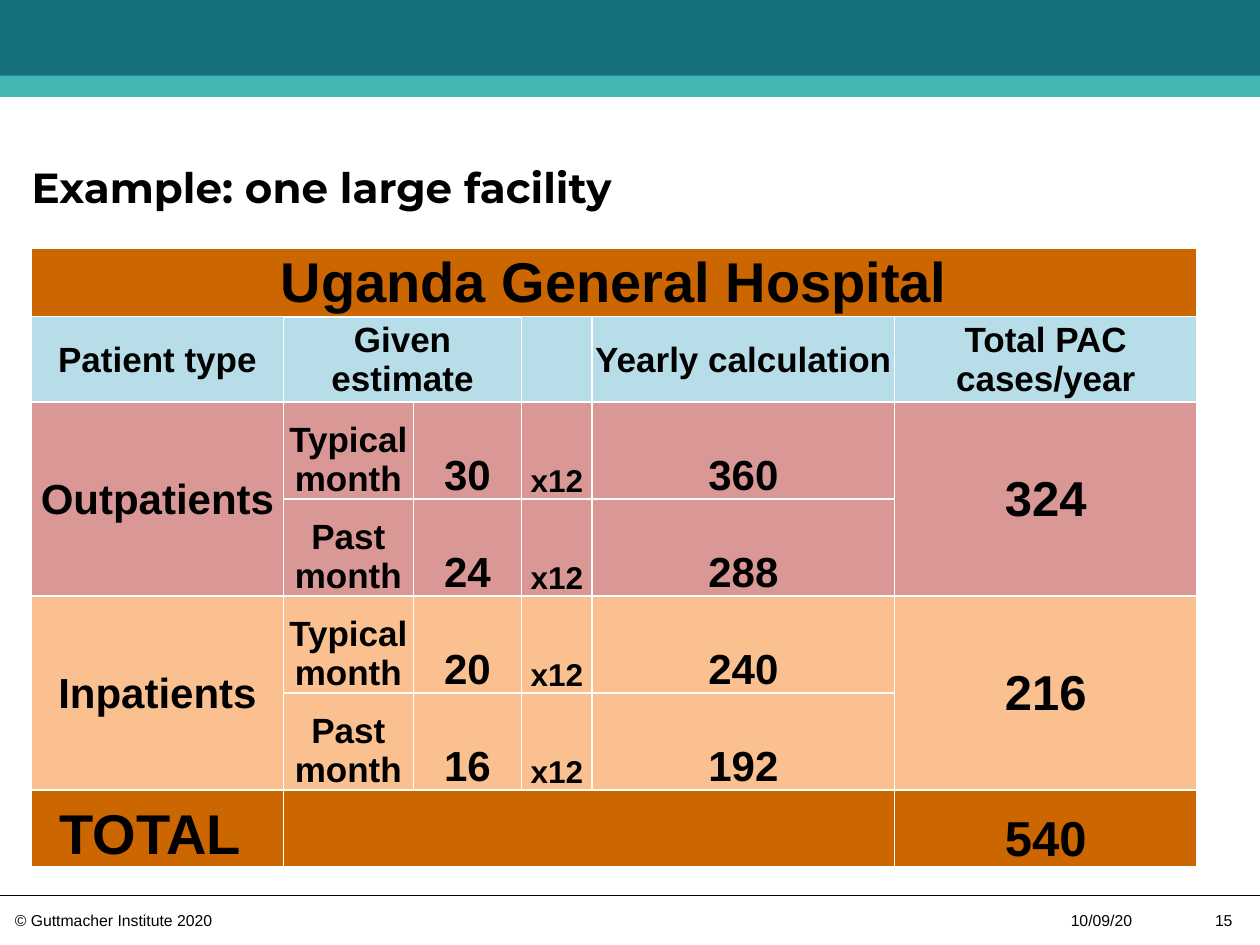
from lxml.etree import SubElement
from pptx import Presentation
from pptx.dml.color import RGBColor
from pptx.enum.shapes import MSO_CONNECTOR, MSO_SHAPE
from pptx.enum.text import MSO_ANCHOR, PP_ALIGN
from pptx.oxml.ns import qn
from pptx.util import Inches, Pt

ORANGE, BLUE, ROSE, PEACH = "CC6600", "B7DEE8", "D99795", "FAC090"
COLUMN_WIDTHS = [2, 1.03, 0.86, 0.56, 2.4, 2.4]
ROW_HEIGHTS = [0.51, 0.62] + [0.77] * 4 + [0.61]
HEADINGS = [(0, "Patient type"), (1, "Given estimate"), (3, ""),
            (4, "Yearly calculation"), (5, "Total PAC cases/year")]
PATIENT_GROUPS = [
    ("Outpatients", ROSE, [("Typical month", "30", "360"), ("Past month", "24", "288")], "324"),
    ("Inpatients", PEACH, [("Typical month", "20", "240"), ("Past month", "16", "192")], "216"),
]


def color(value):
    return RGBColor.from_string(value)


def format_text(para, size, font="Arial", bold=False, align=PP_ALIGN.LEFT):
    para.alignment = align
    para.font.size, para.font.name, para.font.bold = Pt(size), font, bold
    para.font.color.rgb = color("000000")


def clear_margins(frame):
    frame.margin_left = frame.margin_right = frame.margin_top = frame.margin_bottom = 0


def add_header(page, left, top, width, height):
    band_height = Inches(0.17)
    bands = [(top, height, "15707C"), (top + height - band_height, band_height, "43B7B3")]
    for band_top, band_size, fill in bands:
        band = page.shapes.add_shape(MSO_SHAPE.RECTANGLE, left, band_top, width, band_size)
        band.shadow.inherit = False
        band.fill.solid()
        band.fill.fore_color.rgb = color(fill)
        band.line.fill.background()


def add_footer(page, left, top, width):
    rule = page.shapes.add_connector(MSO_CONNECTOR.STRAIGHT, left, top, left + width, top)
    rule.line.color.rgb = color("000000")
    rule.line.width = Pt(0.75)
    SubElement(rule._element.spPr, qn("a:effectLst"))
    entries = [
        ("© Guttmacher Institute 2020", 0.02, 1.94, PP_ALIGN.LEFT),
        ("10/09/20", 8.4, 0.76, PP_ALIGN.LEFT),
        ("15", 9.43, 0.45, PP_ALIGN.RIGHT),
    ]
    for text, offset, box_width, align in entries:
        box = page.shapes.add_textbox(left + Inches(offset), top + Inches(0.07),
                                      Inches(box_width), Inches(0.25))
        frame = box.text_frame
        frame.word_wrap = True
        frame.text = text
        format_text(frame.paragraphs[0], 9, align=align)


def place_title(page, left, top, width, height):
    title = page.shapes.title
    title.left, title.top, title.width, title.height = left, top, width, height
    frame = title.text_frame
    frame.text = "Example: one large facility"
    clear_margins(frame)
    frame.vertical_anchor = MSO_ANCHOR.BOTTOM
    format_text(frame.paragraphs[0], 24, "Montserrat", True)


def set_borders(cell, thick):
    properties = cell._tc.get_or_add_tcPr()
    for index, side in enumerate(("lnL", "lnR", "lnT", "lnB")):
        width = Pt(1.5) if thick and side in ("lnT", "lnB") else Pt(1)
        line = SubElement(properties, qn(f"a:{side}"), w=str(width))
        fill = SubElement(line, qn("a:solidFill"))
        SubElement(fill, qn("a:srgbClr"), val="FFFFFF")
        properties.remove(line)
        properties.insert(index, line)


def fill_cell(cell, text, size, anchor=MSO_ANCHOR.MIDDLE):
    cell.text = text
    cell.vertical_anchor = anchor
    format_text(cell.text_frame.paragraphs[0], size, bold=True, align=PP_ALIGN.CENTER)


def add_case_table(page, left, top, width, height):
    table = page.shapes.add_table(len(ROW_HEIGHTS), len(COLUMN_WIDTHS),
                                  left, top, width, height).table
    for column, size in zip(table.columns, COLUMN_WIDTHS):
        column.width = int(width * size / sum(COLUMN_WIDTHS))
    for row, size in zip(table.rows, ROW_HEIGHTS):
        row.height = int(height * size / sum(ROW_HEIGHTS))

    row_fills = [ORANGE, BLUE, ROSE, ROSE, PEACH, PEACH, ORANGE]
    for row_index, fill in enumerate(row_fills):
        for column_index in range(len(COLUMN_WIDTHS)):
            cell = table.cell(row_index, column_index)
            cell.margin_left = cell.margin_right = cell.margin_top = Inches(0.01)
            cell.margin_bottom = 0
            cell.fill.solid()
            cell.fill.fore_color.rgb = color(fill)
            set_borders(cell, thick=column_index == 1 and 0 < row_index < 6)

    merges = [(0, 0, 0, 5), (1, 1, 1, 2), (2, 0, 3, 0), (2, 5, 3, 5),
              (4, 0, 5, 0), (4, 5, 5, 5), (6, 1, 6, 4)]
    for first_row, first_column, last_row, last_column in merges:
        table.cell(first_row, first_column).merge(table.cell(last_row, last_column))

    fill_cell(table.cell(0, 0), "Uganda General Hospital", 32)
    for column_index, heading in HEADINGS:
        fill_cell(table.cell(1, column_index), heading, 20)
    for group_index, (name, _, estimates, total) in enumerate(PATIENT_GROUPS):
        first_row = 2 + 2 * group_index
        fill_cell(table.cell(first_row, 0), name, 24)
        fill_cell(table.cell(first_row, 5), total, 28)
        for row_index, (period, monthly, yearly) in enumerate(estimates, first_row):
            values = [(period, 20), (monthly, 24), ("x12", 18), (yearly, 24)]
            for column_index, (text, size) in enumerate(values, 1):
                fill_cell(table.cell(row_index, column_index), text, size, MSO_ANCHOR.BOTTOM)
    fill_cell(table.cell(6, 0), "TOTAL ", 32, MSO_ANCHOR.BOTTOM)
    fill_cell(table.cell(6, 5), "540", 28, MSO_ANCHOR.BOTTOM)


def main():
    deck = Presentation()
    deck.slide_width, deck.slide_height = Inches(10), Inches(7.5)
    page = deck.slides.add_slide(deck.slide_layouts[5])
    add_footer(page, 0, Inches(7.11), deck.slide_width)
    add_header(page, 0, 0, deck.slide_width, Inches(0.77))
    place_title(page, Inches(0.25), Inches(0.93), Inches(7.41), Inches(0.75))
    add_case_table(page, Inches(0.25), Inches(1.97), Inches(9.25), Inches(4.82))
    deck.save("out.pptx")


if __name__ == "__main__":
    main()
